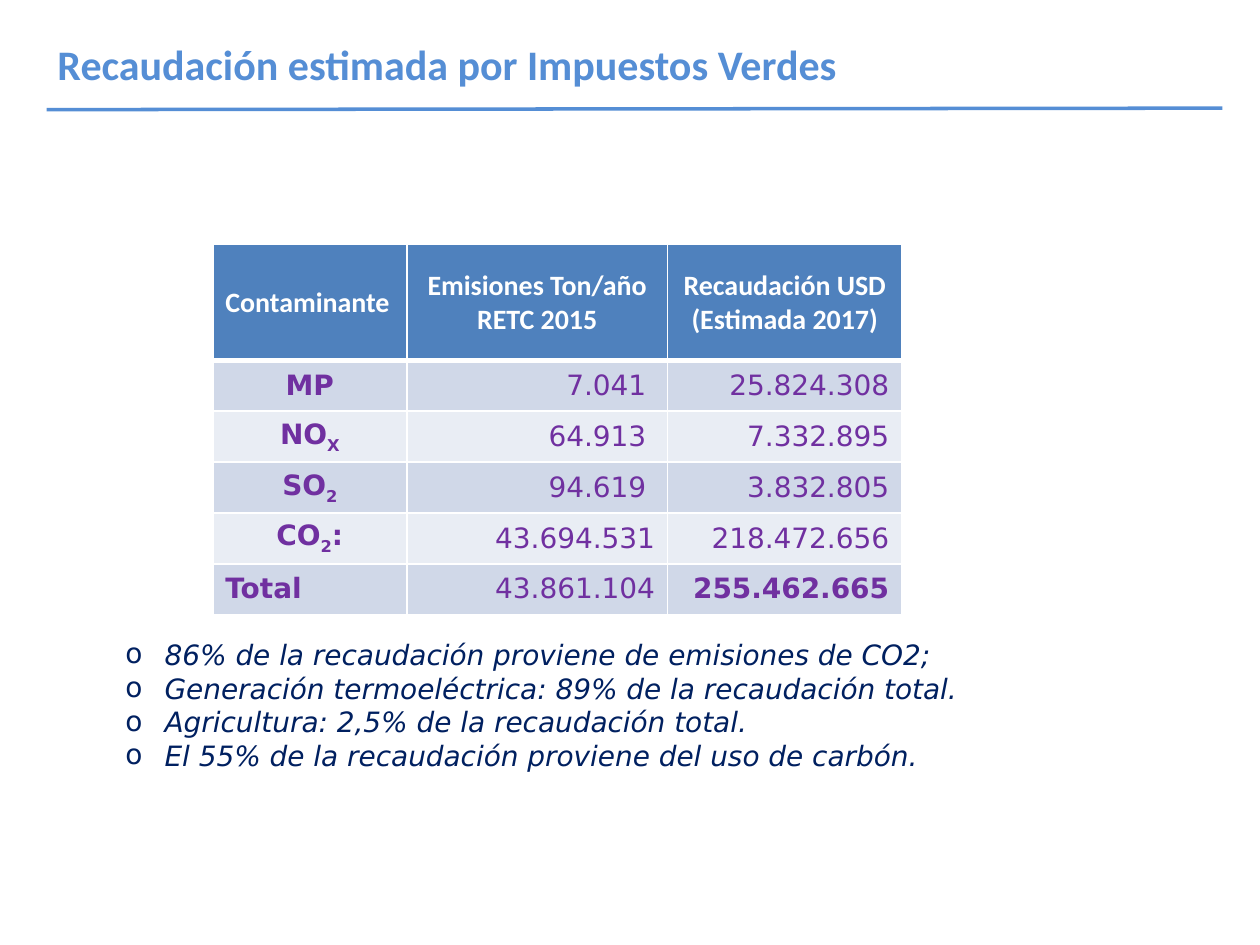
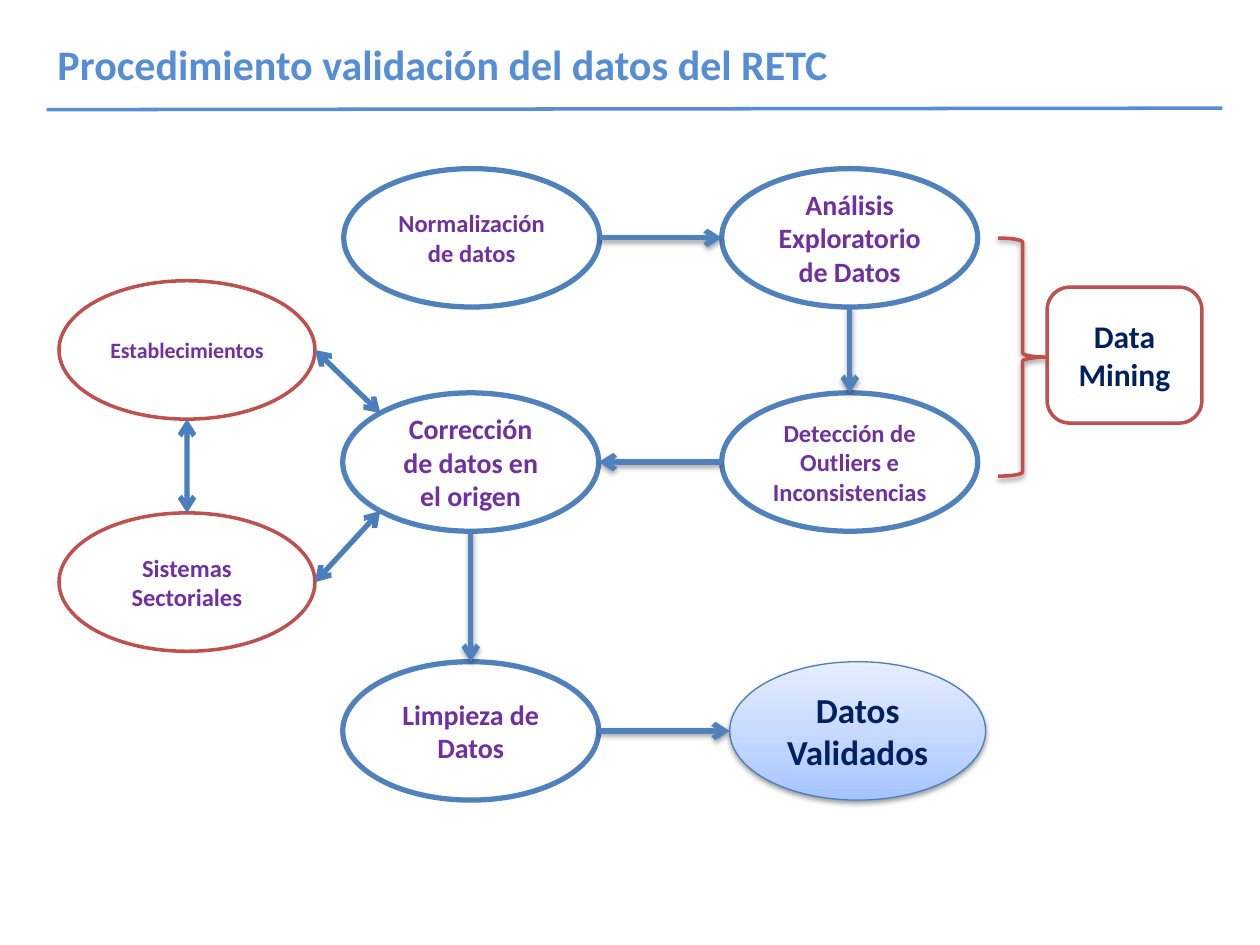
import math
from copy import deepcopy

from lxml import etree
from pptx import Presentation
from pptx.dml.color import RGBColor
from pptx.enum.shapes import MSO_CONNECTOR, MSO_SHAPE
from pptx.enum.text import MSO_ANCHOR, PP_ALIGN
from pptx.oxml.ns import qn
from pptx.util import Cm, Pt

# Enum members
LEFT, CENTER, RIGHT, JUSTIFY = PP_ALIGN.LEFT, PP_ALIGN.CENTER, PP_ALIGN.RIGHT, PP_ALIGN.JUSTIFY
MIDDLE = MSO_ANCHOR.MIDDLE
STRAIGHT = MSO_CONNECTOR.STRAIGHT
ELLIPSE, ROUNDED = MSO_SHAPE.OVAL, MSO_SHAPE.ROUNDED_RECTANGLE
BRACE = MSO_SHAPE.RIGHT_BRACE

# Colours
WHITE = RGBColor(0xFF, 0xFF, 0xFF)
BLACK = RGBColor(0x00, 0x00, 0x00)
SKY = RGBColor(0x55, 0x8E, 0xD5)
BLUE = RGBColor(0x4F, 0x81, 0xBD)
EDGE_BLUE = RGBColor(0x4B, 0x7E, 0xBC)
RED = RGBColor(0xC0, 0x50, 0x4D)
PURPLE = RGBColor(0x70, 0x30, 0xA0)
NAVY = RGBColor(0x00, 0x20, 0x60)
BAND_DARK = RGBColor(0xD0, 0xD8, 0xE8)
BAND_LIGHT = RGBColor(0xE9, 0xED, 0xF4)
RESULT_GRADIENT = [(0, RGBColor(0xA4, 0xC4, 0xFF)),
                   (0.35, RGBColor(0xBF, 0xD4, 0xFF)),
                   (1, RGBColor(0xE6, 0xEE, 0xFF))]

# Fonts
HEADING_FONT = "Calibri"
DATA_FONT = "DejaVu Sans"

# Connection sites of an ellipse, counterclockwise from the top
TOP, TOP_LEFT, SIDE_LEFT, BOTTOM_LEFT, BOTTOM, SIDE_RIGHT = 0, 1, 2, 3, 4, 6

# Ellipses of the procedure, in cm
STEP_WIDTH, STEP_HEIGHT = 5.16, 2.79
SOURCE_X, FIX_X, ANALYSIS_X = 1.19, 6.91, 14.55
ROW_1, ROW_2, ROW_3 = 3.4, 7.92, 13.34

HEADERS = ["Contaminante", "Emisiones Ton/año RETC 2015",
           "Recaudación USD (Estimada 2017)"]
# An underscore lowers the character after it
REVENUE = [
    ("MP", "7.041 ", "25.824.308"),
    ("NO_X", "64.913 ", "7.332.895"),
    ("SO_2", "94.619 ", "3.832.805"),
    ("CO_2:", "43.694.531", "218.472.656"),
    ("Total", "43.861.104", "255.462.665"),
]
FINDINGS = [
    "86% de la recaudación proviene de emisiones de CO2;",
    "Generación termoeléctrica: 89% de la recaudación total.",
    "Agricultura: 2,5% de la recaudación total.",
    "El 55% de la recaudación proviene del uso de carbón.",
]


def set_font(paragraph, name, size, color, bold=False, italic=False):
    font = paragraph.font
    font.name, font.size = name, Pt(size)
    font.bold, font.italic = bold, italic
    font.color.rgb = color


def add_shadow(effects):
    shadow = etree.SubElement(effects, qn("a:outerShdw"), blurRad="40000",
                              dist="20000", dir="5400000", rotWithShape="0")
    color = etree.SubElement(shadow, qn("a:srgbClr"), val=str(BLACK))
    etree.SubElement(color, qn("a:alpha"), val="38000")


def add_line(slide, start, end, color, width, shadow=False):
    """Draw a straight line between two (x, y) points in cm."""
    line = slide.shapes.add_connector(STRAIGHT, *map(Cm, start + end))
    line.line.color.rgb = color
    line.line.width = Pt(width)
    effects = etree.SubElement(line._element.spPr, qn("a:effectLst"))
    if shadow:
        add_shadow(effects)
    return line


def add_titled_slide(prs, title):
    slide = prs.slides.add_slide(prs.slide_layouts[6])
    frame = slide.shapes.add_textbox(Cm(0.91), Cm(0.66), Cm(22), Cm(1.27)).text_frame
    frame.word_wrap = True
    frame.text = title
    set_font(frame.paragraphs[0], HEADING_FONT, 24, SKY, bold=True)
    add_line(slide, (0.94, 2.21), (24.64, 2.18), SKY, 2)
    return slide


# Revenue table and findings
def set_borders(cell, top=1, bottom=1):
    properties = cell._tc.get_or_add_tcPr()
    for side, width in (("L", 1), ("R", 1), ("T", top), ("B", bottom)):
        border = etree.SubElement(properties, qn(f"a:ln{side}"), w=str(Pt(width)))
        fill = etree.SubElement(border, qn("a:solidFill"))
        etree.SubElement(fill, qn("a:srgbClr"), val=str(WHITE))


def write_formula(paragraph, formula):
    base, _, tail = formula.partition("_")
    for position, part in enumerate((base, tail[:1], tail[1:])):
        if part:
            run = paragraph.add_run()
            run.text = part
            if position == 1:
                run.font._element.set("baseline", "-25000")


def fill_cell(cell, text, fill, align, font, color, bold):
    cell.fill.solid()
    cell.fill.fore_color.rgb = fill
    cell.vertical_anchor = MIDDLE
    paragraph = cell.text_frame.paragraphs[0]
    write_formula(paragraph, text)
    paragraph.alignment = align
    set_font(paragraph, font, 16, color, bold)


def add_revenue_table(slide):
    widths, header_height, row_height = (3.91, 5.26, 4.72), 2.34, 1.02
    last = len(REVENUE)
    table = slide.shapes.add_table(
        last + 1, len(widths), Cm(4.29), Cm(4.93), Cm(sum(widths)),
        Cm(header_height + last * row_height)).table
    for column, width in zip(table.columns, widths):
        column.width = Cm(width)
    for index, row in enumerate(table.rows):
        row.height = Cm(row_height if index else header_height)

    for col, header in enumerate(HEADERS):
        cell = table.cell(0, col)
        set_borders(cell, bottom=3)
        fill_cell(cell, header, BLUE, CENTER if col else LEFT,
                  HEADING_FONT, WHITE, True)
    for row, values in enumerate(REVENUE, start=1):
        for col, value in enumerate(values):
            cell = table.cell(row, col)
            set_borders(cell, top=3 if row == 1 else 1)
            label_align = LEFT if row == last else CENTER
            fill_cell(cell, value, BAND_DARK if row % 2 else BAND_LIGHT,
                      RIGHT if col else label_align, DATA_FONT, PURPLE,
                      col == 0 or (row == last and col == 2))


def add_findings(slide):
    frame = slide.shapes.add_textbox(Cm(1.5), Cm(12.73), Cm(22.61), Cm(3.68)).text_frame
    frame.word_wrap = True
    for index, finding in enumerate(FINDINGS):
        paragraph = frame.add_paragraph() if index else frame.paragraphs[0]
        paragraph.text = finding
        paragraph.alignment = JUSTIFY
        properties = paragraph._p.get_or_add_pPr()
        properties.set("marL", str(Cm(1.57)))
        properties.set("indent", str(Cm(-0.79)))
        etree.SubElement(properties, qn("a:buFont"), typeface=DATA_FONT)
        etree.SubElement(properties, qn("a:buChar"), char="o")
        set_font(paragraph, DATA_FONT, 16, NAVY, italic=True)


# Validation procedure
def add_outlined(slide, kind, box, color, width):
    shape = slide.shapes.add_shape(kind, *map(Cm, box))
    shape.shadow.inherit = False
    shape.line.color.rgb = color
    shape.line.width = Pt(width)
    return shape


def add_node(slide, kind, box, text, size, edge, width, color=PURPLE):
    node = add_outlined(slide, kind, box, edge, width)
    node.fill.solid()
    node.fill.fore_color.rgb = WHITE
    frame = node.text_frame
    frame.word_wrap = True
    frame.vertical_anchor = MIDDLE
    frame.text = text
    frame.paragraphs[0].alignment = CENTER
    set_font(frame.paragraphs[0], HEADING_FONT, size, color, bold=True)
    return node


def add_step(slide, x, y, text, size, edge=BLUE, width=3, color=PURPLE):
    return add_node(slide, ELLIPSE, (x, y, STEP_WIDTH, STEP_HEIGHT),
                    text, size, edge, width, color)


def add_result(slide, x, y, text):
    result = add_step(slide, x, y, text, 20, EDGE_BLUE, 0.75, NAVY)
    result.fill.gradient()
    result.fill.gradient_angle = 90
    stops = result._element.spPr.find(".//" + qn("a:gsLst"))
    stops.append(deepcopy(stops[0]))
    for stop, (position, shade) in zip(result.fill.gradient_stops, RESULT_GRADIENT):
        stop.position = position
        stop.color.rgb = shade
    add_shadow(result._element.spPr.find(qn("a:effectLst")))
    return result


def site_point(ellipse, site):
    angle = math.radians(90 + 45 * site)
    x = ellipse.left + ellipse.width / 2 * (1 + math.cos(angle))
    y = ellipse.top + ellipse.height / 2 * (1 - math.sin(angle))
    return x / Cm(1), y / Cm(1)


def add_arrow(slide, start, start_site, end, end_site, two_way=False):
    """Join two ellipses at their connection sites."""
    arrow = add_line(slide, site_point(start, start_site), site_point(end, end_site),
                     EDGE_BLUE if two_way else BLUE, 3, shadow=not two_way)
    joints = arrow._element.nvCxnSpPr.cNvCxnSpPr
    for tag, step, site in (("a:stCxn", start, start_site), ("a:endCxn", end, end_site)):
        etree.SubElement(joints, qn(tag), id=str(step.shape_id), idx=str(site))
    stroke = arrow.line._get_or_add_ln()
    for tag in ("a:headEnd", "a:tailEnd") if two_way else ("a:tailEnd",):
        etree.SubElement(stroke, qn(tag), type="arrow")


def add_procedure(slide):
    # Steps
    normalizing = add_step(slide, 6.93, ROW_1, "Normalización de datos", 14)
    detecting = add_step(slide, ANALYSIS_X, ROW_2,
                         "Detección de Outliers e Inconsistencias", 14)
    exploring = add_step(slide, ANALYSIS_X, ROW_1, "Análisis Exploratorio de Datos", 16)
    correcting = add_step(slide, FIX_X, ROW_2, "Corrección de datos en el origen", 16)
    cleaning = add_step(slide, FIX_X, ROW_3, "Limpieza de Datos", 16)
    validated = add_result(slide, 14.71, ROW_3, "Datos Validados")

    # Main flow
    add_arrow(slide, normalizing, SIDE_RIGHT, exploring, SIDE_LEFT)
    add_arrow(slide, exploring, BOTTOM, detecting, TOP)
    add_arrow(slide, detecting, SIDE_LEFT, correcting, SIDE_RIGHT)
    add_arrow(slide, correcting, BOTTOM, cleaning, TOP)
    add_arrow(slide, cleaning, SIDE_RIGHT, validated, SIDE_LEFT)

    # Data mining bracket
    brace = add_outlined(slide, BRACE, (20.12, 4.8, 0.99, 4.8), RED, 2)
    brace.fill.background()
    add_shadow(brace._element.spPr.find(qn("a:effectLst")))
    add_node(slide, ROUNDED, (21.11, 5.79, 3.12, 2.74), "Data Mining", 18, RED, 2, NAVY)

    # Data sources
    facilities = add_step(slide, SOURCE_X, 5.66, "Establecimientos", 12.5, RED, 2)
    systems = add_step(slide, SOURCE_X, 10.34, "Sistemas Sectoriales", 14, RED, 2)
    add_arrow(slide, facilities, SIDE_RIGHT, correcting, TOP_LEFT, two_way=True)
    add_arrow(slide, systems, SIDE_RIGHT, correcting, BOTTOM_LEFT, two_way=True)
    add_arrow(slide, systems, TOP, facilities, BOTTOM, two_way=True)


def main():
    prs = Presentation()
    prs.slide_width, prs.slide_height = Cm(25.4), Cm(19.05)

    revenue = add_titled_slide(prs, "Recaudación estimada por Impuestos Verdes")
    add_revenue_table(revenue)
    add_findings(revenue)

    add_procedure(add_titled_slide(prs, "Procedimiento validación del datos del RETC"))
    prs.save("out.pptx")


if __name__ == "__main__":
    main()
